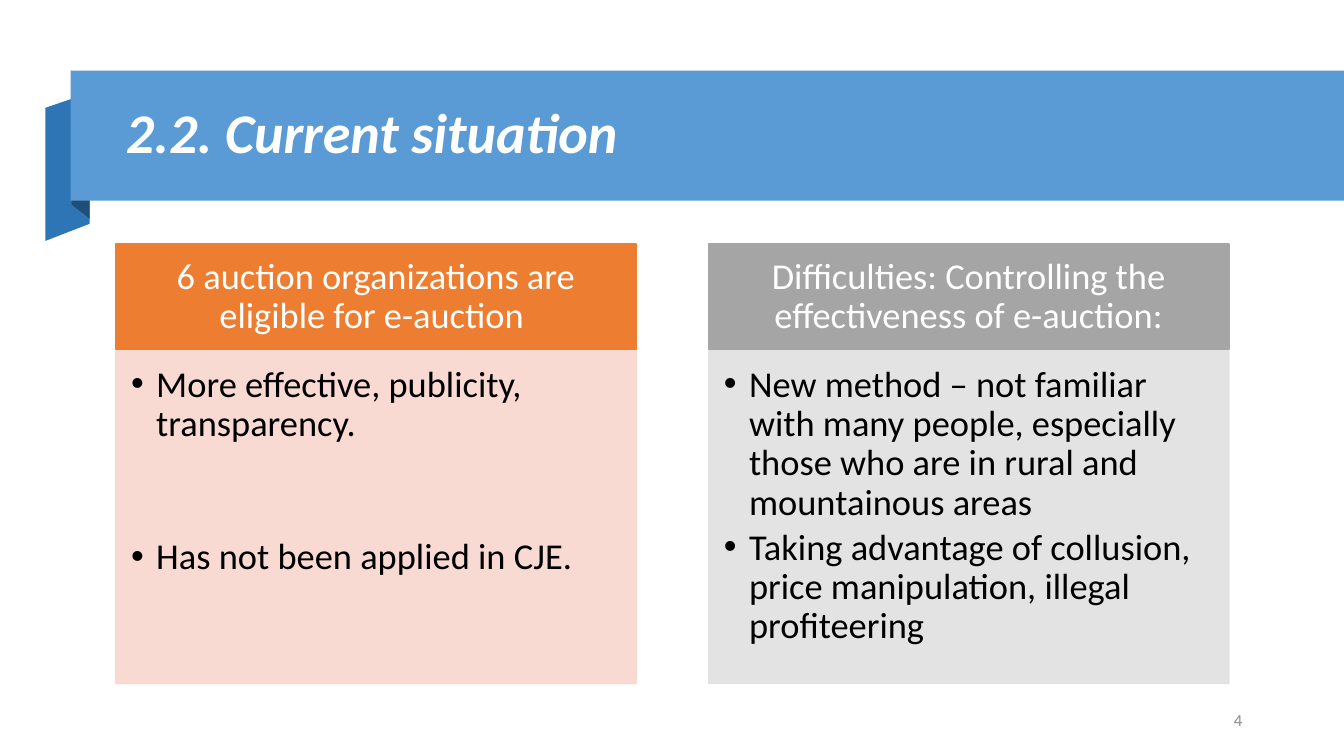
from dataclasses import dataclass

from lxml.etree import SubElement
from pptx import Presentation
from pptx.dml.color import RGBColor
from pptx.enum.shapes import MSO_SHAPE
from pptx.enum.text import MSO_ANCHOR, PP_ALIGN
from pptx.oxml.ns import qn
from pptx.util import Inches, Pt


@dataclass(frozen=True)
class Theme:
    """Colours, font and type sizes of the slide."""
    font: str = "Calibri"
    title_size: int = 40
    body_size: int = 26
    number_size: int = 12
    white: str = "FFFFFF"
    black: str = "000000"
    banner: str = "5B9BD5"
    ribbon: str = "2E75B6"
    fold: str = "1F4E79"
    orange: str = "ED7D31"
    orange_tint: str = "F8D7CE"
    gray: str = "A5A5A5"
    gray_tint: str = "E1E1E1"
    number: str = "8C8C8C"


class SlideBuilder:
    """Draws styled elements on the current slide."""

    def __init__(self, slide, theme):
        """Keep the slide and its theme."""
        self.slide = slide
        self.theme = theme

    def fill(self, shape, color):
        """Give a shape a flat fill with no outline or shadow."""
        shape.shadow.inherit = False
        shape.fill.solid()
        shape.fill.fore_color.rgb = RGBColor.from_string(color)
        shape.line.fill.background()

    def polygon(self, points, color):
        """Draw a closed outline through points given in inches."""
        corners = [(Inches(x), Inches(y)) for x, y in points]
        builder = self.slide.shapes.build_freeform(*corners[0])
        builder.add_line_segments(corners[1:], close=True)
        self.fill(builder.convert_to_shape(), color)

    def rectangle(self, box, color, outlined=False, opacity=100):
        """Draw a rectangle, optionally outlined in its own colour."""
        shape = self.slide.shapes.add_shape(MSO_SHAPE.RECTANGLE, *map(Inches, box))
        self.fill(shape, color)
        if outlined:
            shape.line.color.rgb = RGBColor.from_string(color)
            shape.line.width = Pt(1)
        if opacity < 100:
            for tone in shape._element.spPr.iter(qn("a:srgbClr")):
                SubElement(tone, qn("a:alpha"), val=str(opacity * 1000))
        return shape

    def textbox(self, box):
        """Add an empty text box."""
        return self.slide.shapes.add_textbox(*map(Inches, box))

    def set_text(self, shape, lines, size, color, align=PP_ALIGN.LEFT,
                 anchor=MSO_ANCHOR.MIDDLE, insets=(0.1, 0.05, 0.1, 0.05), emphasis=False):
        """Set the paragraphs of a shape, format them and return them."""
        frame = shape.text_frame
        frame.word_wrap = True
        frame.vertical_anchor = anchor
        (frame.margin_left, frame.margin_top,
         frame.margin_right, frame.margin_bottom) = map(Inches, insets)
        frame.text = "\n".join(lines)
        for paragraph in frame.paragraphs:
            paragraph.alignment = align
            paragraph.line_spacing = 0.9
            for run in paragraph.runs:
                run.font.name = self.theme.font
                run.font.size = Pt(size)
                run.font.bold = run.font.italic = emphasis
                run.font.color.rgb = RGBColor.from_string(color)
        return frame.paragraphs

    def bullets(self, shape, lines, gap):
        """Fill a shape with bulleted lines set apart by a gap in points."""
        paragraphs = self.set_text(shape, lines, self.theme.body_size, self.theme.black,
                                   anchor=MSO_ANCHOR.TOP, insets=(0.15, 0.15, 0.2, 0.23))
        for paragraph in paragraphs:
            paragraph.space_after = Pt(gap)
            properties = paragraph._p.get_or_add_pPr()
            properties.set("marL", str(Inches(0.25)))
            properties.set("indent", str(Inches(-0.25)))
            SubElement(properties, qn("a:buFont"), typeface="Arial")
            SubElement(properties, qn("a:buChar"), char="•")

    def column(self, left, heading, lines, color, tint, gap):
        """Draw a heading block above a tinted panel of bullets."""
        width = 5.16
        header = self.rectangle((left, 2.42, width, 1.05), color, outlined=True)
        self.set_text(header, [heading], self.theme.body_size, self.theme.white,
                      PP_ALIGN.CENTER, insets=(0.2, 0.12, 0.2, 0.12))
        panel = self.rectangle((left, 3.48, width, 3.3), tint, outlined=True, opacity=90)
        self.bullets(panel, lines, gap)


def main():
    """Build and save the slide."""
    theme = Theme()
    presentation = Presentation()
    presentation.slide_width = Inches(13.33)
    presentation.slide_height = Inches(7.5)
    slide = presentation.slides.add_slide(presentation.slide_layouts[6])
    builder = SlideBuilder(slide, theme)

    builder.polygon([(0.89, 2.22), (0.45, 2.39), (0.45, 1.07), (0.89, 0.92)], theme.ribbon)
    builder.polygon([(0.89, 2.17), (0.71, 2.03), (0.71, 0.7), (0.89, 0.85)], theme.fold)
    builder.rectangle((0.7, 0.7, 12.63, 1.29), theme.banner)
    builder.set_text(builder.textbox((1.15, 0.86, 11.27, 0.96)), ["2.2. Current situation"],
                     theme.title_size, theme.white, emphasis=True)

    builder.column(1.15, "6 auction organizations are eligible for e-auction ",
                   ["More effective, publicity, transparency.",
                    "Has not been applied in CJE."],
                   theme.orange, theme.orange_tint, gap=67)
    builder.column(7.03, "Difficulties: Controlling the effectiveness of e-auction:",
                   ["New method – not familiar with many people, especially those who are "
                    "in rural and mountainous areas",
                    "Taking advantage of collusion, price manipulation, illegal profiteering"],
                   theme.gray, theme.gray_tint, gap=4)

    builder.set_text(builder.textbox((9.42, 6.95, 3, 0.4)), ["4"],
                     theme.number_size, theme.number, PP_ALIGN.RIGHT)
    presentation.save("out.pptx")


if __name__ == "__main__":
    main()
